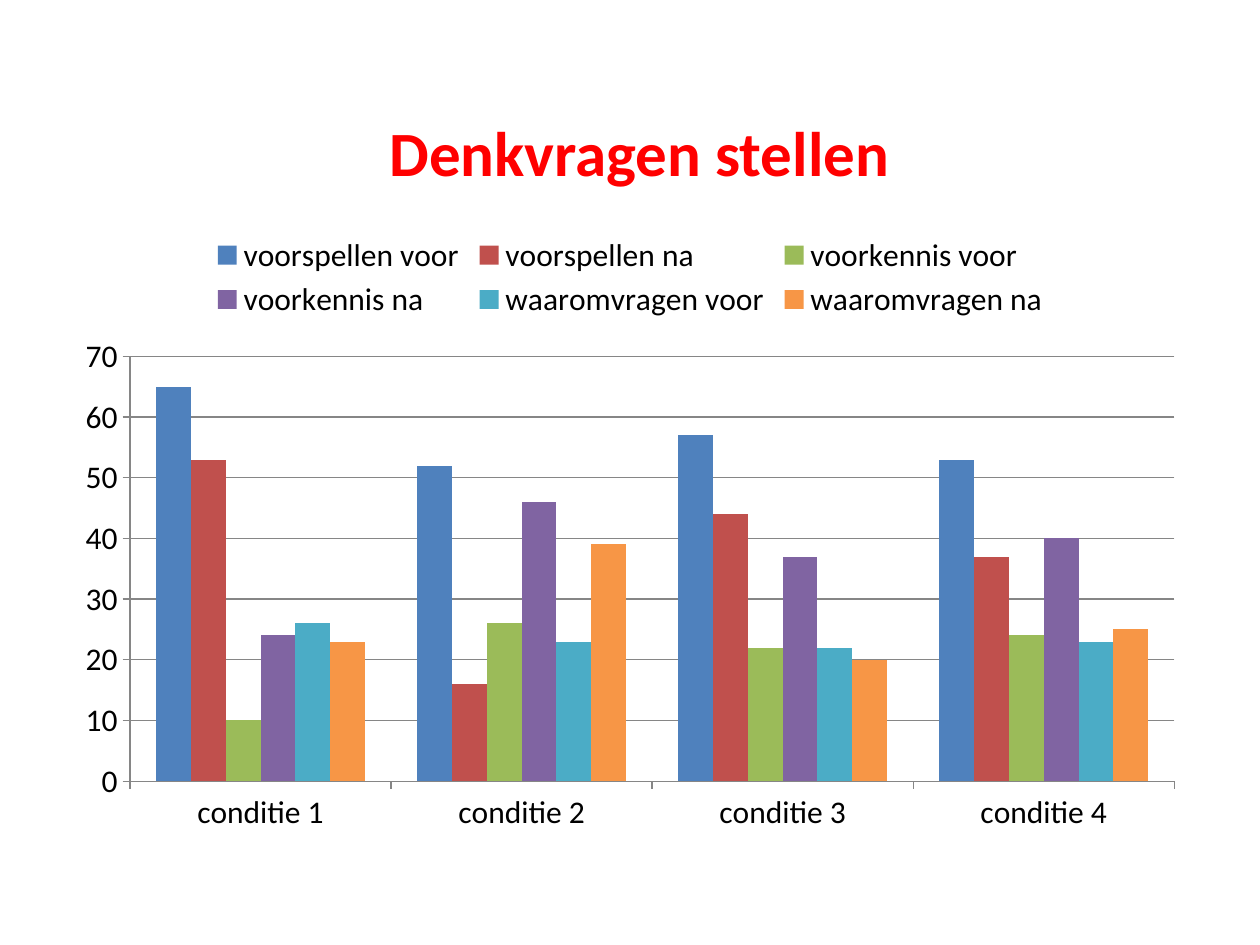
from dataclasses import dataclass

from pptx import Presentation
from pptx.chart.data import CategoryChartData
from pptx.dml.color import RGBColor
from pptx.enum.chart import XL_CHART_TYPE, XL_LEGEND_POSITION, XL_TICK_MARK
from pptx.enum.text import MSO_ANCHOR, PP_ALIGN
from pptx.util import Inches, Pt

CLUSTERED = XL_CHART_TYPE.COLUMN_CLUSTERED
LEGEND_TOP = XL_LEGEND_POSITION.TOP
TICK_OUTSIDE = XL_TICK_MARK.OUTSIDE
BOTTOM = MSO_ANCHOR.BOTTOM
CENTER = PP_ALIGN.CENTER

HEADING = "Denkvragen stellen"
CONDITIONS = ["conditie 1", "conditie 2", "conditie 3", "conditie 4"]
QUESTION_SCORES = [
    ("voorspellen voor", (65, 52, 57, 53), "4F81BD"),
    ("voorspellen na", (53, 16, 44, 37), "C0504D"),
    ("voorkennis voor", (10, 26, 22, 24), "9BBB59"),
    ("voorkennis na", (24, 46, 37, 40), "8064A2"),
    ("waaromvragen voor", (26, 23, 22, 23), "4BACC6"),
    ("waaromvragen na", (23, 39, 20, 25), "F79646"),
]


@dataclass(frozen=True)
class Theme:
    font: str = "Calibri"
    heading_size: int = 36
    chart_size: int = 18
    heading: str = "FF0000"
    text: str = "000000"
    grid: str = "868686"


THEME = Theme()
WIDTH, HEIGHT = Inches(10), Inches(7.5)
MARGIN = 0.05
HEADING_TOP, HEADING_HEIGHT = 0.04, 1 / 6
CHART_TOP, CHART_HEIGHT = 7 / 30, 0.66


def area(top, height):
    return (
        int(WIDTH * MARGIN),
        int(HEIGHT * top),
        int(WIDTH * (1 - 2 * MARGIN)),
        int(HEIGHT * height),
    )


def style_font(font, size, color, bold=False):
    font.name = THEME.font
    font.size = Pt(size)
    font.bold = bold
    font.color.rgb = RGBColor.from_string(color)


def style_line(line):
    line.color.rgb = RGBColor.from_string(THEME.grid)
    line.width = Pt(0.75)


def add_heading(slide):
    heading = slide.shapes.title
    heading.left, heading.top, heading.width, heading.height = area(
        HEADING_TOP, HEADING_HEIGHT
    )
    frame = heading.text_frame
    frame.text = HEADING
    frame.vertical_anchor = BOTTOM
    frame.margin_left = Inches(0.25)
    paragraph = frame.paragraphs[0]
    paragraph.alignment = CENTER
    style_font(paragraph.runs[0].font, THEME.heading_size, THEME.heading, True)


def add_scores(slide):
    scores = CategoryChartData()
    scores.categories = CONDITIONS
    for name, values, _ in QUESTION_SCORES:
        scores.add_series(name, values)
    chart = slide.shapes.add_chart(
        CLUSTERED, *area(CHART_TOP, CHART_HEIGHT), scores
    ).chart
    style_font(chart.font, THEME.chart_size, THEME.text)
    chart.has_title = False
    chart.has_legend = True
    chart.legend.position = LEGEND_TOP
    chart.legend.include_in_layout = False

    plot = chart.plots[0]
    plot.gap_width = 150
    plot.overlap = 0
    plot.vary_by_categories = False
    for series, (_, _, color) in zip(plot.series, QUESTION_SCORES):
        series.format.fill.solid()
        series.format.fill.fore_color.rgb = RGBColor.from_string(color)

    for axis in (chart.category_axis, chart.value_axis):
        axis.major_tick_mark = TICK_OUTSIDE
        style_line(axis.format.line)
    score_axis = chart.value_axis
    score_axis.minimum_scale, score_axis.maximum_scale = 0, 70
    score_axis.major_unit = 10
    score_axis.has_major_gridlines = True
    style_line(score_axis.major_gridlines.format.line)


def main():
    deck = Presentation()
    deck.slide_width, deck.slide_height = WIDTH, HEIGHT
    slide = deck.slides.add_slide(deck.slide_layouts[5])
    add_heading(slide)
    add_scores(slide)
    deck.save("out.pptx")


if __name__ == "__main__":
    main()
